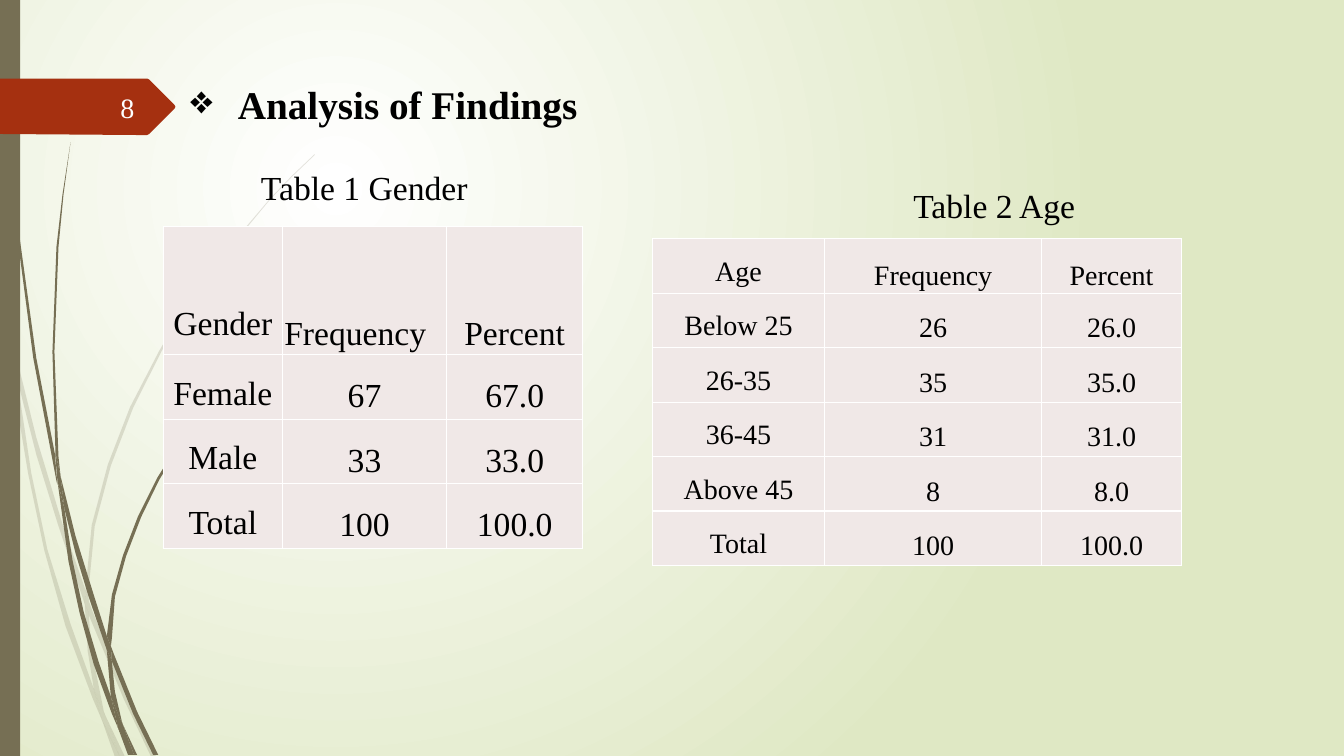
import pptx
import pptx.dml.color
import pptx.enum.shapes
import pptx.enum.text
import pptx.oxml
import pptx.oxml.ns
import pptx.util
from lxml import etree

PX = 9144  # EMU in one px, at 100 px to the inch
SLIDE_W, SLIDE_H = 1333, 750

WHITE = pptx.dml.color.RGBColor(0xFF, 0xFF, 0xFF)
PALE_GREEN = pptx.dml.color.RGBColor(0xDF, 0xE8, 0xC4)
OLIVE = pptx.dml.color.RGBColor(0x76, 0x6F, 0x54)
RUST = pptx.dml.color.RGBColor(0xA5, 0x30, 0x10)
NUMBER_WHITE = pptx.dml.color.RGBColor(0xFE, 0xFF, 0xFF)
CELL_PINK = pptx.dml.color.RGBColor(0xF0, 0xE8, 0xE7)
BLACK = pptx.dml.color.RGBColor(0, 0, 0)

FONT = "Times New Roman"
ALIGN = pptx.enum.text.PP_ALIGN
ANCHOR = pptx.enum.text.MSO_ANCHOR

FAINT_GRASS = [
    [(11, 350), (9, 322), (0, 282), (0, 299), (10, 344)],
    [(58, 522), (84, 599), (85, 586), (62, 520), (36, 434), (14, 345),
     (17, 376), (36, 451)],
    [(92, 607), (88, 596), (88, 610), (123, 694), (150, 751), (155, 751),
     (127, 692)],
    [(119, 751), (124, 751), (105, 711)],
    [(93, 683), (70, 619), (47, 545), (31, 469), (17, 376), (11, 350),
     (18, 410), (28, 470), (44, 546), (65, 621), (92, 693), (101, 714),
     (99, 707)],
    [(84, 599), (87, 646), (93, 683), (96, 692), (105, 711), (103, 706),
     (91, 646), (88, 610), (88, 608)],
    [(88, 584), (94, 522), (110, 462), (132, 405), (160, 349), (192, 295),
     (229, 245), (268, 198), (290, 175), (312, 154), (312, 153), (289, 175),
     (268, 197), (228, 244), (190, 294), (158, 348), (129, 404), (107, 461),
     (91, 521), (85, 584), (85, 586), (88, 596)],
    [(101, 714), (114, 751), (119, 751)],
    [(88, 608), (88, 610), (88, 596), (85, 586), (84, 599)],
    [(96, 692), (93, 683), (99, 707), (101, 714), (119, 751), (105, 711)],
]
SOLID_GRASS = [
    [(7, 110), (17, 233), (33, 355), (56, 477), (57, 481), (55, 457),
     (55, 453), (36, 355), (19, 232), (8, 109), (5, 48), (4, 0), (3, 0),
     (4, 48)],
    [(88, 592), (106, 645), (106, 633), (106, 631), (93, 590), (75, 532),
     (60, 472), (64, 505), (75, 549)],
    [(113, 649), (110, 641), (111, 656), (132, 708), (152, 749), (157, 749),
     (136, 706)],
    [(110, 691), (98, 657), (83, 607), (72, 556), (64, 505), (57, 477),
     (68, 557), (79, 608), (93, 659), (111, 708), (117, 722), (116, 717)],
    [(60, 472), (58, 453), (54, 349), (58, 245), (63, 193), (70, 141),
     (62, 193), (56, 245), (52, 349), (55, 449)],
    [(133, 749), (136, 749), (122, 719)],
    [(57, 477), (64, 505), (60, 472), (55, 449), (55, 453)],
    [(111, 633), (114, 592), (125, 552), (140, 513), (158, 476), (180, 440),
     (205, 406), (231, 374), (245, 359), (261, 344), (260, 344), (245, 358),
     (231, 373), (204, 405), (178, 439), (156, 474), (137, 512), (122, 551),
     (111, 590), (106, 631), (110, 641)],
    [(117, 722), (127, 749), (131, 749)],
    [(106, 645), (110, 691), (116, 706), (122, 719), (121, 716), (114, 686),
     (111, 656), (109, 651)],
    [(106, 645), (109, 651), (111, 656), (110, 641), (106, 631), (106, 633)],
    [(116, 706), (110, 691), (116, 717), (117, 722), (130, 749), (133, 749),
     (122, 719)],
]
NUMBER_TAG = [(173, 108), (148, 133), (146, 134), (136, 134), (0, 133),
              (0, 78), (146, 78), (148, 79), (173, 104), (174, 106)]

GENDER_ROWS = [("Gender", "Frequency", "Percent"), ("Female", "67", "67.0"),
               ("Male", "33", "33.0"), ("Total", "100", "100.0")]
AGE_ROWS = [("Age", "Frequency", "Percent"), ("Below 25", "26", "26.0"),
            ("26-35", "35", "35.0"), ("36-45", "31", "31.0"),
            ("Above 45", "8", "8.0"), ("Total", "100", "100.0")]


def px(*lengths):
    return [pptx.util.Emu(length * PX) for length in lengths]


def add_xml(parent, tag, **attributes):
    return etree.SubElement(parent, pptx.oxml.ns.qn(tag), attributes)


def paint_background(slide):
    """Radial gradient, white near the upper left."""
    fill = slide.background.fill
    fill.gradient()
    for stop, color in zip(fill.gradient_stops, (WHITE, PALE_GREEN)):
        stop.color.rgb = color
    linear = slide.element.find(".//" + pptx.oxml.ns.qn("a:lin"))
    gradient = linear.getparent()
    gradient.remove(linear)
    circle = add_xml(gradient, "a:path", path="circle")
    add_xml(circle, "a:fillToRect", l="50000", t="50000", r="100000", b="100000")


def paint(shape, color, opacity=100):
    shape.shadow.inherit = False
    shape.line.fill.background()
    shape.fill.solid()
    shape.fill.fore_color.rgb = color
    if opacity < 100:
        rgb = shape.element.spPr.find(".//" + pptx.oxml.ns.qn("a:srgbClr"))
        add_xml(rgb, "a:alpha", val=str(opacity * 1000))


def add_outline(slide, points, color, opacity=100):
    builder = slide.shapes.build_freeform(*points[0], scale=PX)
    builder.add_line_segments(points[1:], close=True)
    paint(builder.convert_to_shape(), color, opacity)


def write(frame, text, size=24, color=BLACK, bold=False, align=ALIGN.LEFT, spacing=1.0):
    paragraph = frame.paragraphs[0]
    paragraph.alignment = align
    paragraph.line_spacing = spacing
    run = paragraph.add_run()
    run.text = text
    run.font.name = FONT
    run.font.size = pptx.util.Pt(size)
    run.font.bold = bold
    run.font.color.rgb = color
    return paragraph


def add_text(slide, box, text, anchor=ANCHOR.TOP, indent=0, bullet=None, **style):
    frame = slide.shapes.add_textbox(*px(*box)).text_frame
    frame.word_wrap = True
    frame.vertical_anchor = anchor
    properties = write(frame, text, **style)._p.get_or_add_pPr()
    properties.set("marL", str(indent * PX))
    if bullet:
        properties.set("indent", str(-indent * PX))
        add_xml(properties, "a:buChar", char=bullet)


def border_cell(cell):
    properties = cell._tc.get_or_add_tcPr()
    for position, side in enumerate(("a:lnL", "a:lnR", "a:lnT", "a:lnB")):
        line = add_xml(properties, side, w=str(pptx.util.Pt(1)))
        add_xml(add_xml(line, "a:solidFill"), "a:srgbClr", val=str(WHITE))
        properties.insert(position, line)


def add_frequency_table(slide, left, top, widths, heights, rows, size):
    shape = slide.shapes.add_table(len(rows), len(widths),
                                   *px(left, top, sum(widths), sum(heights)))
    table = shape.table
    table.first_row = table.horz_banding = False
    for column, width in zip(table.columns, px(*widths)):
        column.width = width
    for row, height in zip(table.rows, px(*heights)):
        row.height = height
    for r, values in enumerate(rows):
        for c, value in enumerate(values):
            cell = table.cell(r, c)
            cell.margin_left = cell.margin_right = px(2)[0]
            cell.margin_top = cell.margin_bottom = px(2)[0]
            cell.vertical_anchor = (ANCHOR.TOP if c == 0 else
                                    ANCHOR.BOTTOM if r == 0 else ANCHOR.MIDDLE)
            cell.fill.solid()
            cell.fill.fore_color.rgb = CELL_PINK
            border_cell(cell)
            write(cell.text_frame, value, size=size, align=ALIGN.CENTER, spacing=1.5)
    return table


def main():
    deck = pptx.Presentation()
    deck.slide_width, deck.slide_height = px(SLIDE_W, SLIDE_H)
    slide = deck.slides.add_slide(deck.slide_layouts[6])
    paint_background(slide)

    for blade in FAINT_GRASS:
        add_outline(slide, blade, OLIVE, opacity=20)
    for blade in SOLID_GRASS:
        add_outline(slide, blade, OLIVE)
    side_bar = slide.shapes.add_shape(pptx.enum.shapes.MSO_SHAPE.RECTANGLE,
                                      *px(0, 0, 20, SLIDE_H))
    paint(side_bar, OLIVE)
    add_outline(slide, NUMBER_TAG, RUST)

    add_text(slide, (179, 75, 905, 102), "Analysis of Findings", size=28, bold=True,
             indent=47, bullet="❖")
    add_text(slide, (58, 86, 85, 40), "8", size=20, color=NUMBER_WHITE,
             align=ALIGN.RIGHT, anchor=ANCHOR.MIDDLE)

    gender = add_frequency_table(slide, 162, 225, (118, 163, 135),
                                 (127, 62, 62, 62), GENDER_ROWS, size=24)
    gender.cell(0, 0).margin_top = px(60)[0]
    gender.cell(0, 1).text_frame.paragraphs[0].alignment = ALIGN.LEFT
    add_text(slide, (249, 161, 274, 50), "Table 1 Gender", anchor=ANCHOR.BOTTOM)

    add_frequency_table(slide, 647, 237, (171, 215, 139), [54] * 6, AGE_ROWS, size=20)
    add_text(slide, (797, 137, 413, 91), "Table 2 Age", anchor=ANCHOR.BOTTOM, indent=99)

    deck.save("out.pptx")


if __name__ == "__main__":
    main()
